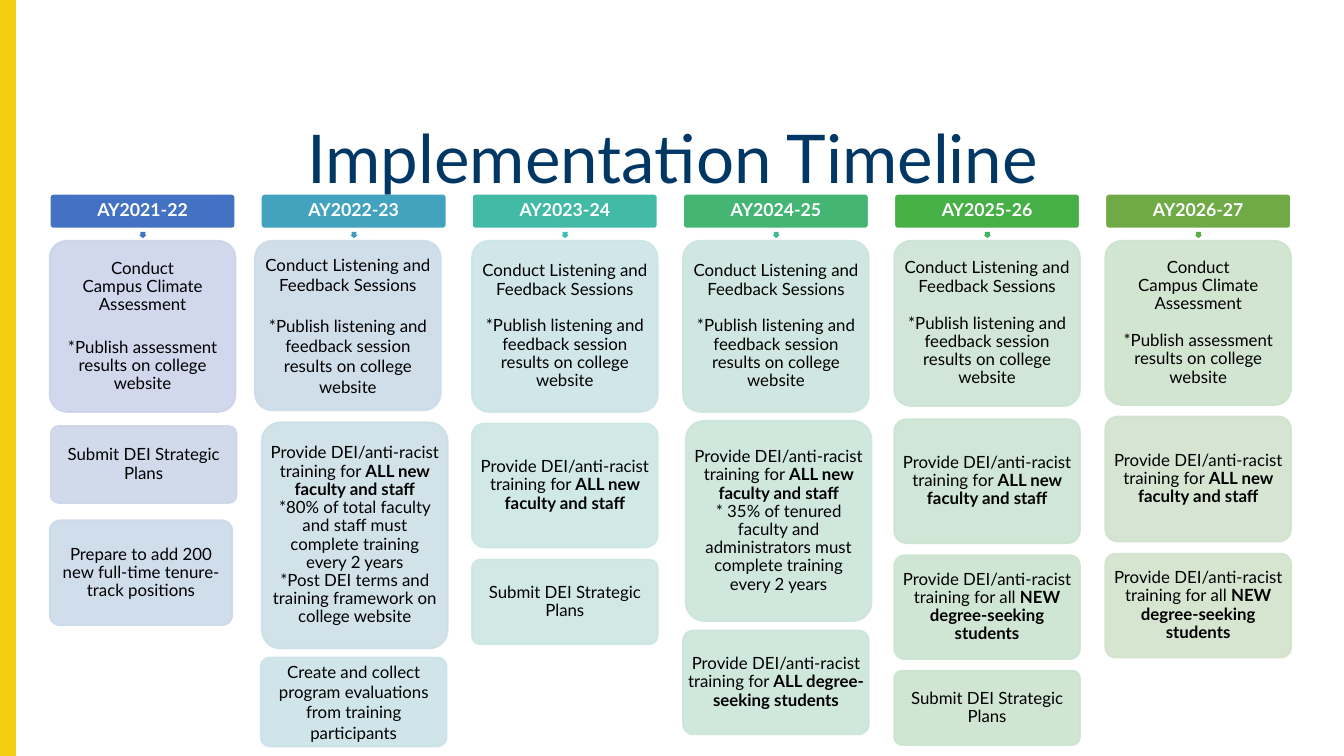
from lxml import etree
from pptx import Presentation
from pptx import util as u
from pptx.dml.color import RGBColor
from pptx.enum import shapes, text
from pptx.oxml import ns

FONT = "Lato"
COLORS = {"bar": "F4CE12", "title": "003764", "black": "000000", "white": "FFFFFF"}

# Wording: a blank line opens a gap, ** switches bold on and off
CLIMATE = "Conduct\nCampus Climate Assessment\n\n*Publish assessment results on college website"
LISTENING = ("Conduct Listening and Feedback Sessions\n\n"
             "*Publish listening and feedback session results on college website")
PLANS = "Submit DEI Strategic Plans"
TRAINING = "Provide DEI/anti-racist training for "
STAFF = TRAINING + "**ALL new faculty and staff**"
STUDENTS = TRAINING + "all **NEW degree-seeking students**"

# Year, header colour, arrow colour, paragraph gap in points, then the cards:
# shift from the column, top, width, height (cm), tint, line spacing, wording
YEARS = [
    ("AY2021-22", "4372C3", "4372C3", 13, [
        (0, 4.55, 3.51, 3.23, "CCD3EA", 0.9, CLIMATE),
        (0.02, 8.05, 3.51, 1.45, "CBD6E8", 0.9, PLANS),
        (0, 9.83, 3.45, 1.98, "CBD9E8", 0.9,
         "Prepare to add 200 new full-time tenure-track positions")]),
    ("AY2022-23", "43A2BE", "439ABF", 11, [
        (-0.11, 4.55, 3.51, 3.2, "CBDBE8", 1.0, LISTENING),
        (0.02, 7.98, 3.51, 4.27, "CCDFE7", 0.9,
         STAFF + "\n*****80% of total faculty and staff must complete training every 2 years"
         .replace("*****", "*** **".replace(" ", ""))
         + "\n*Post DEI terms and training framework on college website"),
        (0, 12.42, 3.51, 1.68, "CBE2E7", 1.0,
         "Create and collect program evaluations from training participants")]),
    ("AY2023-24", "43BAA5", "43BCB8", 10, [
        (0, 4.55, 3.51, 3.23, "CBE4E7", 0.9, LISTENING),
        (0, 8.0, 3.51, 2.34, "CBE7E5", 0.9, STAFF),
        (0, 10.57, 3.51, 1.6, "CCE6E1", 0.9, PLANS)]),
    ("AY2024-25", "44B573", "44B78C", 10, [
        (0, 4.55, 3.51, 3.23, "CBE5DE", 0.9, LISTENING),
        (0.05, 7.95, 3.51, 3.78, "CBE5DB", 0.9,
         STAFF + "\n* 35% of tenured faculty and administrators must complete training every 2 years"),
        (0, 11.91, 3.51, 1.96, "CBE5D9", 0.9, TRAINING + "**ALL degree-seeking students**")]),
    ("AY2025-26", "46AF46", "45B363", 10, [
        (0, 4.55, 3.51, 3.12, "CCE4D5", 0.9, LISTENING),
        (0, 7.92, 3.51, 2.34, "CBE4D2", 0.9, STAFF),
        (0, 10.49, 3.51, 1.96, "CBE4CF", 0.9, STUDENTS),
        (0, 12.67, 3.51, 1.4, "CBE4CD", 0.9, PLANS)]),
    ("AY2026-27", "6FAA47", "58AD46", 10, [
        (0, 4.55, 3.51, 3.1, "CDE2CC", 0.9, CLIMATE),
        (0, 7.87, 3.51, 2.36, "D0E2CC", 0.9, STAFF),
        (0, 10.46, 3.51, 1.96, "D2E2CB", 0.9, STUDENTS)]),
]
LEFT, PITCH = 0.94, 3.99


def add_box(page, kind, place, fill, line=None, alpha=100):
    box = page.shapes.add_shape(kind, *[u.Cm(length) for length in place])
    box.shadow.inherit = False
    box.fill.solid()
    box.fill.fore_color.rgb = RGBColor.from_string(fill)
    if line:
        box.line.color.rgb = RGBColor.from_string(line)
        box.line.width = u.Pt(1)
    else:
        box.line.fill.background()
    if alpha < 100:
        for color in box._element.spPr.iter(ns.qn("a:srgbClr")):
            etree.SubElement(color, ns.qn("a:alpha")).set("val", str(alpha * 1000))
    return box


def write(box, wording, size, color, inset, leading=0.9, gap=0):
    frame = box.text_frame
    frame.word_wrap = True
    frame.vertical_anchor = text.MSO_ANCHOR.MIDDLE
    frame.margin_left = frame.margin_right = u.Cm(inset)
    frame.margin_top = frame.margin_bottom = u.Cm(inset)
    para = None
    for block_number, block in enumerate(wording.split("\n\n")):
        for line_number, line in enumerate(block.split("\n")):
            para = frame.add_paragraph() if para is not None else frame.paragraphs[0]
            para.alignment = text.PP_ALIGN.CENTER
            para.line_spacing = leading
            para.space_before = u.Pt(gap if block_number and not line_number else 0)
            for part_number, part in enumerate(line.split("**")):
                if part:
                    span = para.add_run()
                    span.text = part
                    span.font.name = FONT
                    span.font.size = u.Pt(size)
                    span.font.bold = part_number % 2 == 1
                    span.font.color.rgb = RGBColor.from_string(COLORS[color])


deck = Presentation()
deck.slide_width, deck.slide_height = u.Cm(25.4), u.Cm(14.28)
page = deck.slides.add_slide(deck.slide_layouts[5])

# Side bar
add_box(page, shapes.MSO_SHAPE.RECTANGLE, (0, 0, 0.28, 14.28), COLORS["bar"], COLORS["bar"])

# One column per year: header, small arrow, cards
for number, (year, header_color, arrow_color, gap, cards) in enumerate(YEARS):
    left = LEFT + PITCH * number
    header = add_box(page, shapes.MSO_SHAPE.ROUNDED_RECTANGLE, (left, 3.66, 3.51, 0.66),
                     header_color, COLORS["white"])
    header.adjustments[0] = 0.1
    write(header, f"**{year}**", 9.5, "white", 0.05)

    arrow = add_box(page, shapes.MSO_SHAPE.RIGHT_ARROW, (left + 1.7, 4.37, 0.12, 0.14), arrow_color)
    arrow.adjustments[0] = 0.67
    arrow.rotation = 90

    for shift, top, width, height, tint, leading, wording in cards:
        card = add_box(page, shapes.MSO_SHAPE.ROUNDED_RECTANGLE,
                       (left + shift, top, width, height), tint, tint, alpha=89)
        card.adjustments[0] = 0.1
        write(card, wording, 9, "black", 0.03, leading, gap)

# Title, in front of the headers
title = page.shapes.title
title.left, title.top, title.width, title.height = u.Cm(1.3), u.Cm(2.24), u.Cm(22.83), u.Cm(1.02)
write(title, "Implementation Timeline", 36, "title", 0.13)
title.text_frame.vertical_anchor = text.MSO_ANCHOR.TOP
title.text_frame.auto_size = text.MSO_AUTO_SIZE.NONE
page.shapes._spTree.append(title._element)

deck.save("out.pptx")
